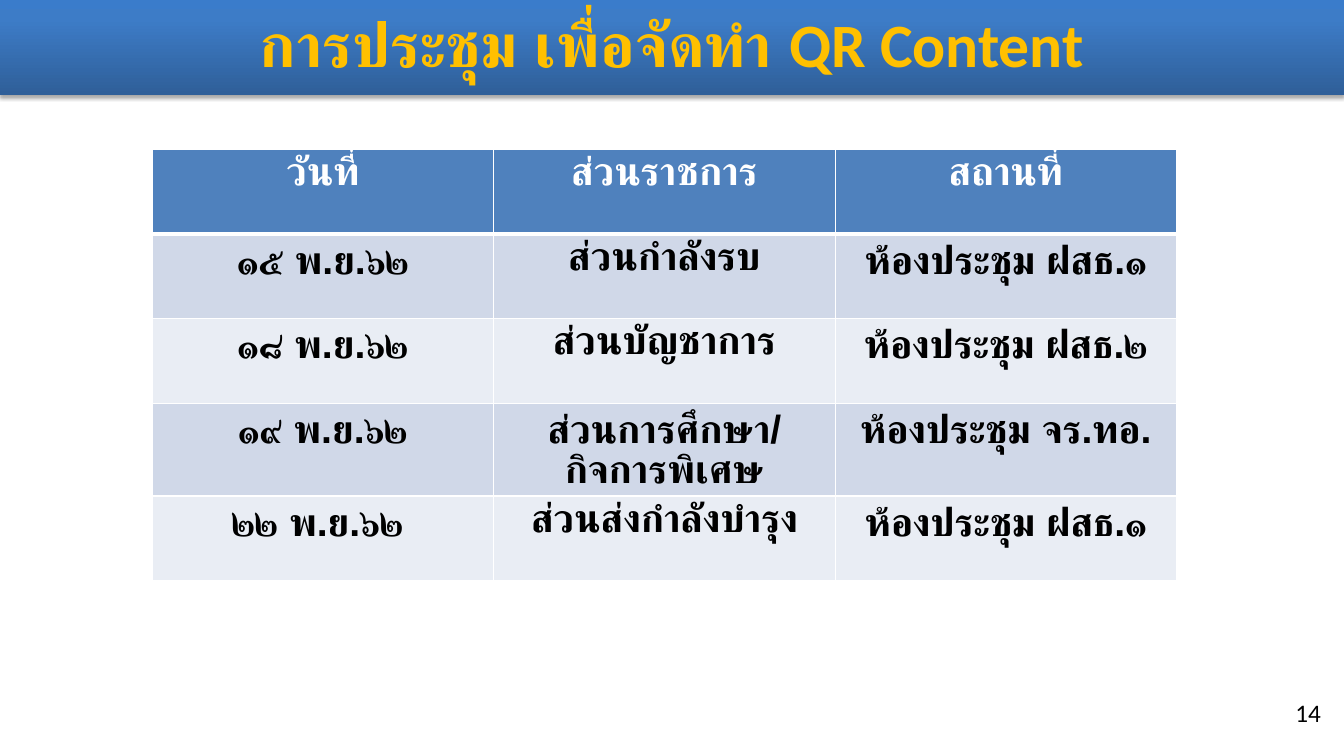
from lxml.etree import SubElement
from pptx import Presentation
from pptx.dml.color import RGBColor
from pptx.enum.text import MSO_ANCHOR, MSO_AUTO_SIZE, PP_ALIGN
from pptx.oxml.ns import qn
from pptx.util import Inches, Pt

HEADER = ["วันที่", "ส่วนราชการ", "สถานที่"]
MEETINGS = [
    ["๑๕ พ.ย.๖๒", "ส่วนกำลังรบ", "ห้องประชุม ฝสธ.๑"],
    ["๑๘ พ.ย.๖๒", "ส่วนบัญชาการ", "ห้องประชุม ฝสธ.๒"],
    ["๑๙ พ.ย.๖๒", "ส่วนการศึกษา/กิจการพิเศษ", "ห้องประชุม จร.ทอ."],
    ["๒๒ พ.ย.๖๒ ", "ส่วนส่งกำลังบำรุง", "ห้องประชุม ฝสธ.๑"],
]
BANDS = ["D0D8E8", "E9EDF4"]


def rgb(color):
    return RGBColor.from_string(color)


def add_xml(parent, tag, **attributes):
    return SubElement(parent, qn(tag), {k: str(v) for k, v in attributes.items()})


def format_paragraph(p, align, size, font, color, bold=False):
    p.alignment = align
    for r in p.runs:
        r.font.size = Pt(size)
        r.font.name = font
        r.font.bold = bold
        r.font.color.rgb = rgb(color)


def add_gradient(sp, stops, angle):
    grad = add_xml(sp._element.spPr, "a:gradFill", rotWithShape=1)
    stop_list = add_xml(grad, "a:gsLst")
    for position, color in stops:
        stop = add_xml(stop_list, "a:gs", pos=position * 1000)
        add_xml(stop, "a:srgbClr", val=color)
    add_xml(grad, "a:lin", ang=angle * 60000, scaled=0)


def add_shadow(sp, color, alpha, blur, distance, angle):
    effects = add_xml(sp._element.spPr, "a:effectLst")
    shadow = add_xml(effects, "a:outerShdw", blurRad=Pt(blur), dist=Pt(distance),
                     dir=angle * 60000, rotWithShape=0)
    add_xml(add_xml(shadow, "a:srgbClr", val=color), "a:alpha", val=alpha * 1000)


def title_band(slide, left, top, width, height):
    sp = slide.shapes.title
    sp.left, sp.top = Inches(left), Inches(top)
    sp.width, sp.height = Inches(width), Inches(height)
    add_gradient(sp, [(0, "2F5F99"), (80, "3D7CC7"), (100, "3A7CCB")], 270)
    add_shadow(sp, "000000", 35, 3.1, 1.8, 90)
    tf = sp.text_frame
    tf.text = "การประชุม เพื่อจัดทำ QR Content"
    tf.word_wrap = True
    tf.auto_size = MSO_AUTO_SIZE.NONE
    tf.vertical_anchor = MSO_ANCHOR.MIDDLE
    tf.margin_left = tf.margin_right = Inches(0.07)
    tf.margin_top = tf.margin_bottom = Inches(0.04)
    p = tf.paragraphs[0]
    p.line_spacing = 0.9
    format_paragraph(p, PP_ALIGN.CENTER, 44, "Calibri", "FFC000", True)


def set_borders(cell, color, **widths):
    """Draw the cell's borders; widths maps L, R, T and B to points."""
    tc_pr = cell._tc.get_or_add_tcPr()
    for index, (side, width) in enumerate(widths.items()):
        line = add_xml(tc_pr, f"a:ln{side}", w=Pt(width))
        add_xml(add_xml(line, "a:solidFill"), "a:srgbClr", val=color)
        tc_pr.insert(index, line)


def meeting_table(slide, left, top, width, height):
    rows = [HEADER] + MEETINGS
    table = slide.shapes.add_table(len(rows), len(HEADER), Inches(left), Inches(top),
                                   Inches(width), Inches(height)).table
    for i, texts in enumerate(rows):
        fill = BANDS[(i - 1) % 2] if i else "4F81BD"
        color = "000000" if i else "FFFFFF"
        for j, text in enumerate(texts):
            cell = table.cell(i, j)
            cell.text = text
            format_paragraph(cell.text_frame.paragraphs[0], PP_ALIGN.CENTER,
                             28, "Arial", color, True)
            cell.fill.solid()
            cell.fill.fore_color.rgb = rgb(fill)
            set_borders(cell, "FFFFFF", L=1, R=1, T=3 if i == 1 else 1,
                        B=1 if i else 3)


def page_number(slide, left, top, width, height):
    tf = slide.shapes.add_textbox(Inches(left), Inches(top),
                                  Inches(width), Inches(height)).text_frame
    tf.word_wrap = True
    tf.text = "14"
    format_paragraph(tf.paragraphs[0], PP_ALIGN.RIGHT, 18, "Calibri", "000000")


def main():
    prs = Presentation()
    prs.slide_width, prs.slide_height = Inches(13.33), Inches(7.5)
    slide = prs.slides.add_slide(prs.slide_layouts[5])
    title_band(slide, 0, 0, 13.33, 0.94)
    meeting_table(slide, 1.51, 1.48, 10.16, 4.2)
    page_number(slide, 10.2, 6.87, 3, 0.4)
    prs.save("out.pptx")


if __name__ == "__main__":
    main()
